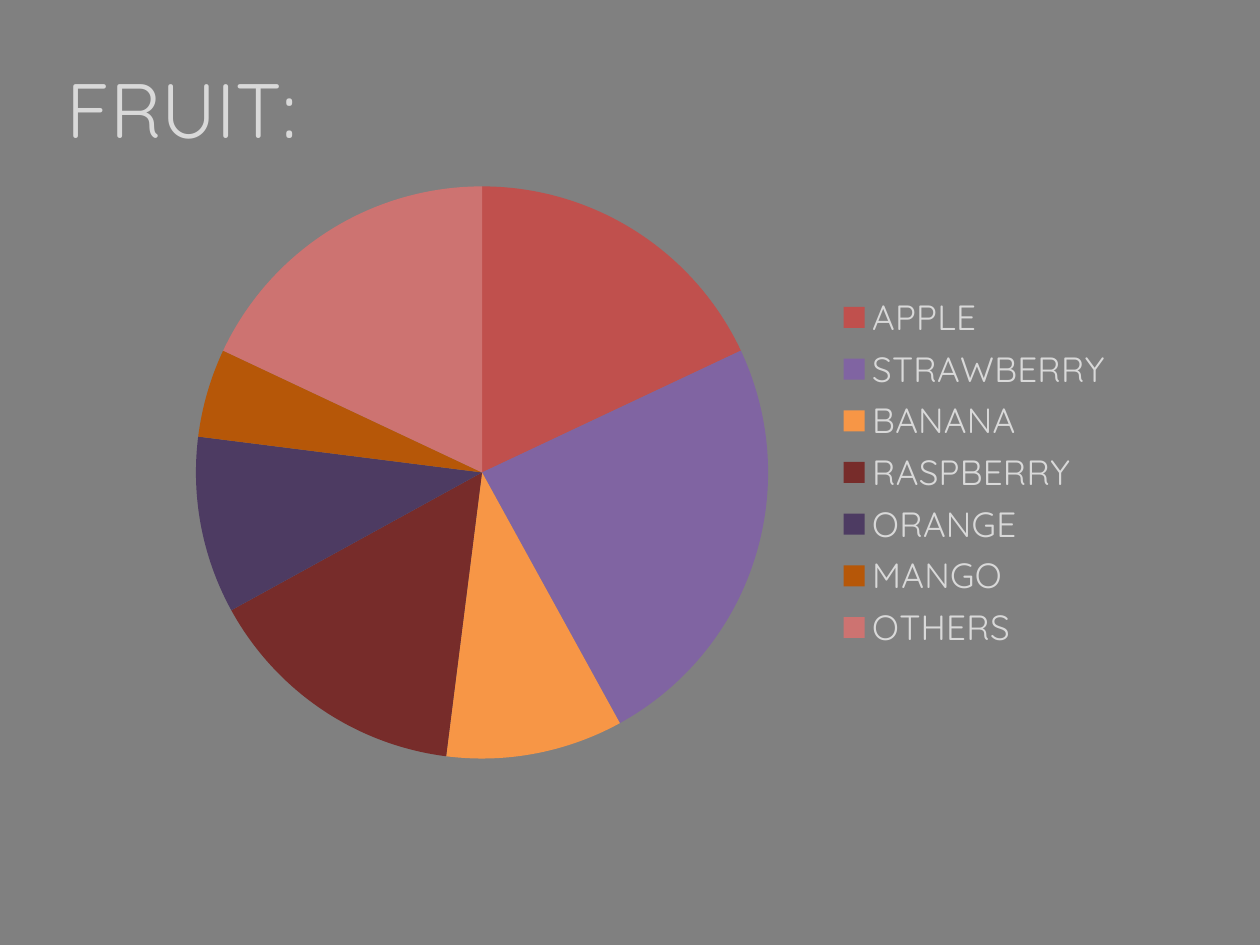
"""Build a slide with a titled pie chart of fruit shares."""
from pptx import Presentation, util as u
from pptx.chart.data import CategoryChartData
from pptx.dml.color import RGBColor
from pptx.enum import chart as ch, shapes, text

TITLE = "FRUIT:"
SERIES = "Series 1"
FRUIT = [
    ("APPLE", 18, "C0504D"),
    ("STRAWBERRY", 24, "8064A2"),
    ("BANANA", 10, "F79646"),
    ("RASPBERRY", 15, "772C2A"),
    ("ORANGE", 10, "4D3B62"),
    ("MANGO", 5, "B65708"),
    ("OTHERS", 18, "CD7371"),
]
THEME = {"font": "Quicksand", "back": "808080", "ink": "D9D9D9",
         "title": 44, "legend": 20}
PX = 914400 // 126
PAGE = (0, 0, 1260, 945)
HEAD = (54, 55, 512, 106)
PLOT = (132, 169, 995, 607)


def box(rect):
    return [u.Emu(n * PX) for n in rect]


def tint(name):
    return RGBColor.from_string(name)


def style(font, size):
    font.name, font.size = THEME["font"], u.Pt(size)
    font.color.rgb = tint(THEME["ink"])


def add_back(slide):
    back = slide.shapes.add_shape(shapes.MSO_SHAPE.RECTANGLE, *box(PAGE))
    back.shadow.inherit = False
    back.fill.solid()
    back.fill.fore_color.rgb = tint(THEME["back"])
    back.line.color.rgb = tint(THEME["back"])
    back.line.width = u.Pt(2)
    slide.shapes.element.insert(2, back.element)


def add_title(slide):
    title = slide.shapes.title
    title.left, title.top, title.width, title.height = box(HEAD)
    frame = title.text_frame
    frame.word_wrap = True
    frame.auto_size = text.MSO_AUTO_SIZE.NONE
    frame.vertical_anchor = text.MSO_ANCHOR.TOP
    para = frame.paragraphs[0]
    para.alignment = text.PP_ALIGN.LEFT
    run = para.add_run()
    run.text = TITLE
    style(run.font, THEME["title"])


def add_pie(slide):
    names, shares, tints = zip(*FRUIT)
    data = CategoryChartData()
    data.categories = names
    data.add_series(SERIES, shares)
    pie = slide.shapes.add_chart(ch.XL_CHART_TYPE.PIE, *box(PLOT), data).chart
    pie.has_title = False
    style(pie.font, THEME["legend"])
    pie.has_legend = True
    pie.legend.position = ch.XL_LEGEND_POSITION.RIGHT
    pie.legend.include_in_layout = False
    style(pie.legend.font, THEME["legend"])
    plot = pie.plots[0]
    plot.vary_by_categories = True
    for i, name in enumerate(tints):
        form = plot.series[0].points[i].format
        form.fill.solid()
        form.fill.fore_color.rgb = tint(name)
        form.line.fill.background()


def main():
    deck = Presentation()
    deck.slide_width, deck.slide_height = box(PAGE[2:])
    slide = deck.slides.add_slide(deck.slide_layouts[5])
    add_back(slide)
    add_title(slide)
    add_pie(slide)
    deck.save("out.pptx")


if __name__ == "__main__":
    main()
